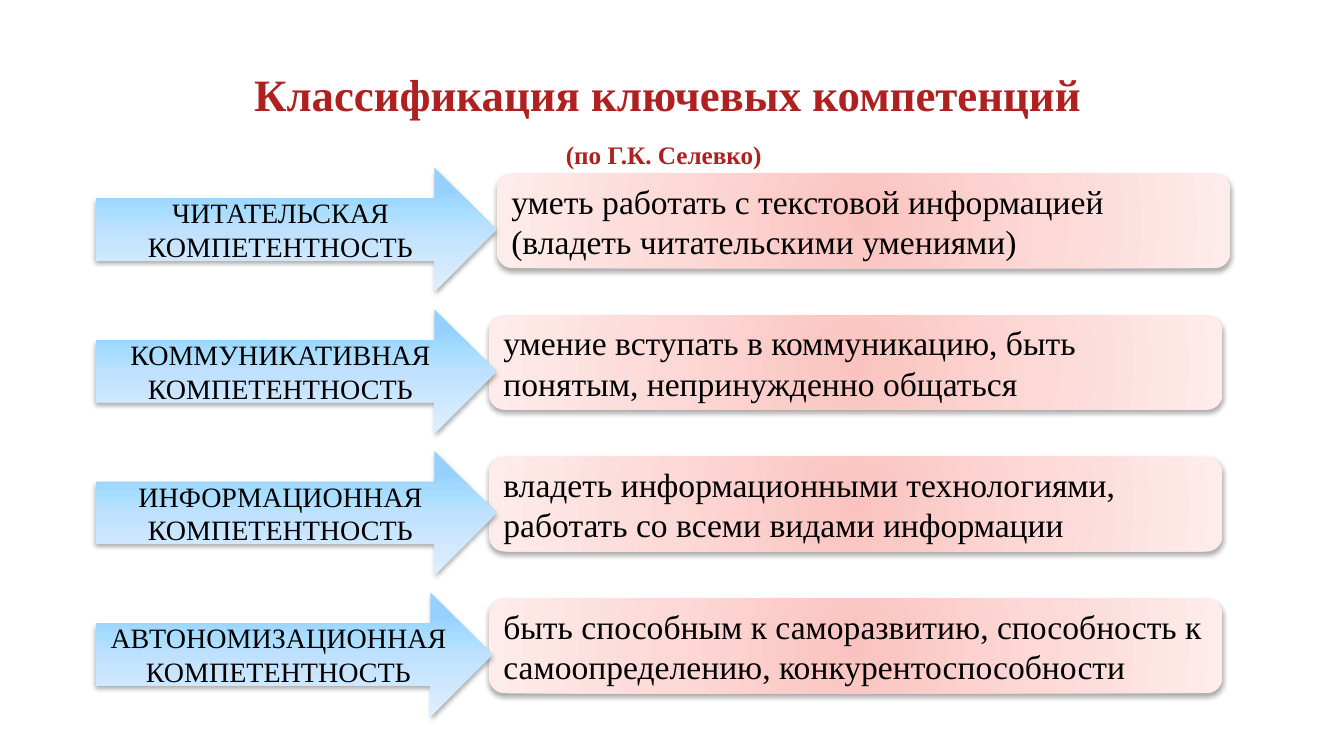
from dataclasses import dataclass

from pptx import Presentation
from pptx.dml.color import RGBColor
from pptx.enum.shapes import MSO_SHAPE
from pptx.enum.text import MSO_ANCHOR, PP_ALIGN
from pptx.oxml import parse_xml
from pptx.oxml.ns import nsdecls, qn
from pptx.shapes.autoshape import Shape
from pptx.slide import Slide
from pptx.text.text import TextFrame
from pptx.util import Cm, Pt

Stops = tuple[tuple[int, str], ...]


@dataclass(frozen=True)
class Theme:
    font: str = "Times New Roman"
    heading: str = "AF2121"
    text: str = "000000"
    title_size: int = 32
    author_size: int = 18
    name_size: int = 20
    skill_size: int = 24
    pink: Stops = ((0, "FBC3BF"), (50, "FCD9D6"), (100, "FDECEB"))
    blue: Stops = ((18, "96D0FF"), (36, "A7DEFF"), (50, "BFE1FF"), (100, "E0EFFF"))
    linear: str = '<a:lin ang="5400000" scaled="0"/>'
    radial: str = ('<a:path path="circle"><a:fillToRect l="50000" t="50000" '
                   'r="50000" b="50000"/></a:path>')


@dataclass(frozen=True)
class Competence:
    name: str
    skill: str
    arrow_width: float = 10.1
    box_left: float = 12.32


THEME = Theme()
COMPETENCES = (
    Competence("ЧИТАТЕЛЬСКАЯ КОМПЕТЕНТНОСТЬ",
               "уметь работать с текстовой информацией "
               "(владеть читательскими умениями)", box_left=12.52),
    Competence("КОММУНИКАТИВНАЯ КОМПЕТЕНТНОСТЬ",
               "умение вступать в коммуникацию, быть понятым, "
               "непринужденно общаться"),
    Competence("ИНФОРМАЦИОННАЯ КОМПЕТЕНТНОСТЬ",
               "владеть информационными технологиями, "
               "работать со всеми видами информации"),
    Competence("АВТОНОМИЗАЦИОННАЯ\vКОМПЕТЕНТНОСТЬ",
               "быть способным к саморазвитию, способность к "
               "самоопределению, конкурентоспособности", arrow_width=10.0),
)

# Row geometry in centimetres
ROW_PITCH = 3.57
ARROW_LEFT, ARROW_TOP, ARROW_HEIGHT = 2.41, 4.22, 3.13
BOX_TOP, BOX_WIDTH, BOX_HEIGHT = 4.37, 18.49, 2.39


def write(frame: TextFrame, text: str, size: int, color: str,
          alignment: PP_ALIGN, bold: bool = False) -> None:
    frame.word_wrap = True
    frame.vertical_anchor = MSO_ANCHOR.MIDDLE
    paragraph = frame.paragraphs[0]
    paragraph.text = text
    paragraph.alignment = alignment
    paragraph.font.name = THEME.font
    paragraph.font.size = Pt(size)
    paragraph.font.bold = bold
    paragraph.font.color.rgb = RGBColor.from_string(color)


def style(shape: Shape, stops: Stops, direction: str) -> None:
    """Give a shape a gradient, no outline and a soft shadow below."""
    shape.line.fill.background()
    shape.shadow.inherit = False
    properties = shape.element.spPr
    stop_xml = "".join(
        f'<a:gs pos="{position * 1000}"><a:srgbClr val="{color}"/></a:gs>'
        for position, color in stops)
    properties.find(qn("a:prstGeom")).addnext(parse_xml(
        f'<a:gradFill {nsdecls("a")} rotWithShape="1">'
        f'<a:gsLst>{stop_xml}</a:gsLst>{direction}</a:gradFill>'))
    properties.find(qn("a:effectLst")).append(parse_xml(
        f'<a:outerShdw {nsdecls("a")} blurRad="{Pt(3.5)}" dist="{Pt(2.2)}" '
        'dir="5400000" rotWithShape="0"><a:srgbClr val="000000">'
        '<a:alpha val="32000"/></a:srgbClr></a:outerShdw>'))


def add_competence(slide: Slide, row: int, competence: Competence) -> None:
    offset = row * ROW_PITCH
    box = slide.shapes.add_shape(
        MSO_SHAPE.ROUNDED_RECTANGLE, Cm(competence.box_left),
        Cm(BOX_TOP + offset), Cm(BOX_WIDTH), Cm(BOX_HEIGHT))
    style(box, THEME.pink, THEME.radial)
    write(box.text_frame, competence.skill, THEME.skill_size, THEME.text,
          PP_ALIGN.LEFT)

    arrow = slide.shapes.add_shape(
        MSO_SHAPE.RIGHT_ARROW, Cm(ARROW_LEFT), Cm(ARROW_TOP + offset),
        Cm(competence.arrow_width), Cm(ARROW_HEIGHT))
    style(arrow, THEME.blue, THEME.linear)
    write(arrow.text_frame, competence.name, THEME.name_size, THEME.text,
          PP_ALIGN.CENTER)


def main() -> None:
    presentation = Presentation()
    presentation.slide_width, presentation.slide_height = Cm(33.87), Cm(19.05)
    slide = presentation.slides.add_slide(
        presentation.slide_layouts.get_by_name("Title Only"))

    # Title and author
    title = slide.shapes.title
    title.left, title.top = Cm(2.44), Cm(1.57)
    title.width, title.height = Cm(28.78), Cm(1.6)
    write(title.text_frame, "Классификация ключевых компетенций",
          THEME.title_size, THEME.heading, PP_ALIGN.CENTER, bold=True)
    author = slide.shapes.add_textbox(Cm(2.44), Cm(3.38), Cm(28.58), Cm(1))
    write(author.text_frame, "(по Г.К. Селевко)",
          THEME.author_size, THEME.heading, PP_ALIGN.CENTER, bold=True)

    # Competences
    for row, competence in enumerate(COMPETENCES):
        add_competence(slide, row, competence)

    presentation.save("out.pptx")


if __name__ == "__main__":
    main()
